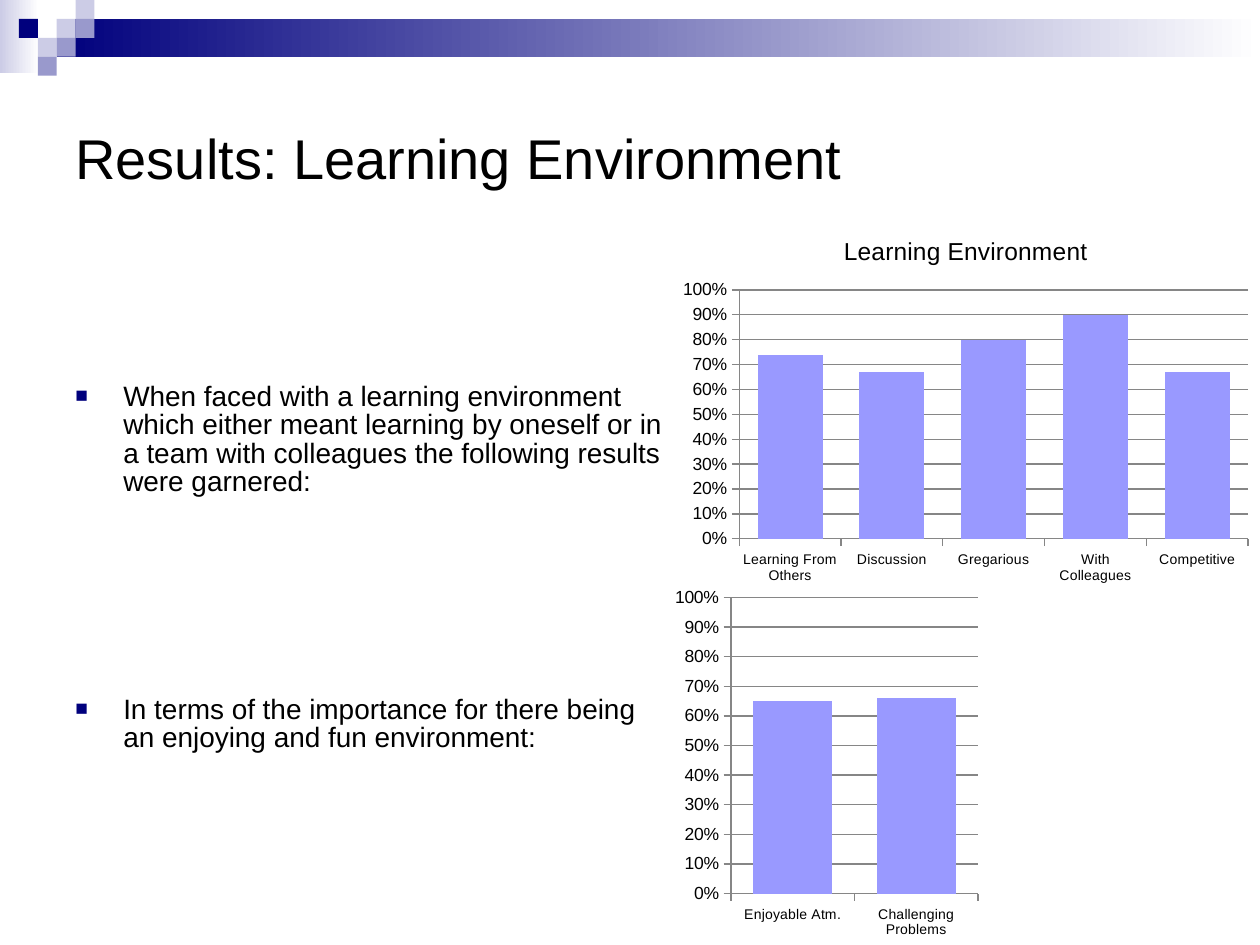
from typing import NamedTuple

from pptx import Presentation
from pptx.chart.data import CategoryChartData
from pptx.dml.color import RGBColor
from pptx.enum.chart import XL_CHART_TYPE, XL_TICK_MARK
from pptx.enum.shapes import MSO_SHAPE
from pptx.enum.text import MSO_ANCHOR
from pptx.oxml import parse_xml
from pptx.oxml.ns import nsdecls, qn
from pptx.util import Inches, Pt

FONT = "Arial"
UNIT = 0.15
HUES = {
    "navy": "00007D",
    "pale": "CCCCE6",
    "mid": "9999CC",
    "bar": "9999FF",
    "grid": "868686",
    "text": "000000",
    "white": "FFFFFF",
}


class Box(NamedTuple):
    x: float
    y: float
    w: float
    h: float


class Band(NamedTuple):
    box: Box
    hue: str


class Tile(NamedTuple):
    col: int
    row: int
    hue: str


class Graph(NamedTuple):
    box: Box
    title: str
    cats: list[str]
    vals: list[float]
    plot: Box


BANDS = [
    Band(Box(0, 0, 0.31, 0.58), "pale"),
    Band(Box(0.45, 0.15, 9.55, 0.3), "navy"),
]
TILES = [
    Tile(3, 1, "pale"),
    Tile(4, 0, "pale"),
    Tile(4, 1, "mid"),
    Tile(2, 2, "pale"),
    Tile(1, 1, "navy"),
    Tile(3, 2, "mid"),
    Tile(2, 3, "mid"),
]
POINTS = [
    "When faced with a learning environment which either meant learning by oneself "
    "or in a team with colleagues the following results were garnered:",
    "In terms of the importance for there being an enjoying and fun environment:",
]
GRAPHS = [
    Graph(
        Box(5.33, 1.72, 4.67, 2.97),
        "Learning Environment",
        ["Learning From Others", "Discussion", "Gregarious", "With Colleagues", "Competitive"],
        [0.74, 0.67, 0.8, 0.9, 0.67],
        Box(0.115, 0.196, 0.865, 0.665),
    ),
    Graph(
        Box(5.31, 4.61, 2.5, 2.89),
        "",
        ["Enjoyable Atm.", "Challenging Problems"],
        [0.65, 0.66],
        Box(0.197, 0.046, 0.784, 0.813),
    ),
]


def rgb(hue: str) -> RGBColor:
    return RGBColor.from_string(HUES[hue])


def place(box: Box) -> list[int]:
    return [Inches(side) for side in box]


def style(font, size: float) -> None:
    font.name = FONT
    font.size = Pt(size)
    font.bold = False
    font.color.rgb = rgb("text")


def add_rect(slide, box: Box):
    rect = slide.shapes.add_shape(MSO_SHAPE.RECTANGLE, *place(box))
    rect.shadow.inherit = False
    rect.line.fill.background()
    return rect


def add_band(slide, band: Band) -> None:
    fill = add_rect(slide, band.box).fill
    fill.gradient()
    fill.gradient_angle = 0
    for stop, hue in zip(fill.gradient_stops, (band.hue, "white")):
        stop.color.rgb = rgb(hue)


def add_tile(slide, tile: Tile) -> None:
    fill = add_rect(slide, Box(tile.col * UNIT, tile.row * UNIT, UNIT, UNIT)).fill
    fill.solid()
    fill.fore_color.rgb = rgb(tile.hue)


def add_title(slide, text: str) -> None:
    frame = slide.shapes.add_textbox(*place(Box(0.5, 0.5, 9, 1.5))).text_frame
    frame.word_wrap = True
    frame.vertical_anchor = MSO_ANCHOR.MIDDLE
    frame.text = text
    style(frame.paragraphs[0].runs[0].font, 32)


def add_bullet(para) -> None:
    props = para._p.get_or_add_pPr()
    props.set("marL", str(Inches(0.38)))
    props.set("indent", str(-Inches(0.38)))
    space = nsdecls("a")
    for xml in (
        f'<a:buClr {space}><a:srgbClr val="{HUES["navy"]}"/></a:buClr>',
        f'<a:buSzPct {space} val="75000"/>',
        f'<a:buFont {space} typeface="{FONT}"/>',
        f'<a:buChar {space} char="■"/>',
    ):
        props.append(parse_xml(xml))


def add_points(slide, points: list[str]) -> None:
    frame = slide.shapes.add_textbox(*place(Box(0.5, 3, 4.89, 3.42))).text_frame
    frame.word_wrap = True
    frame.text = "\n".join(points)
    for rank, para in enumerate(frame.paragraphs):
        para.line_spacing = 0.84
        para.space_before = Pt(114 * rank)
        add_bullet(para)
        style(para.runs[0].font, 16)


def set_plot(chart, plot: Box) -> None:
    area = chart.plots[0]._element.getparent()
    for old in area.findall(qn("c:layout")):
        area.remove(old)
    sides = "".join(f'<c:{name} val="{side}"/>' for name, side in zip("xywh", plot))
    area.insert(0, parse_xml(
        f'<c:layout {nsdecls("c")}><c:manualLayout><c:layoutTarget val="inner"/>'
        f'<c:xMode val="edge"/><c:yMode val="edge"/>{sides}</c:manualLayout></c:layout>'
    ))


def add_graph(slide, graph: Graph) -> None:
    data = CategoryChartData(number_format="0%")
    data.categories = graph.cats
    data.add_series("Series 1", graph.vals)
    kind = XL_CHART_TYPE.COLUMN_CLUSTERED
    chart = slide.shapes.add_chart(kind, *place(graph.box), data).chart
    style(chart.font, 10)
    chart.has_legend = False
    chart.has_title = bool(graph.title)
    if graph.title:
        frame = chart.chart_title.text_frame
        frame.text = graph.title
        style(frame.paragraphs[0].runs[0].font, 14)
        chart.chart_title.include_in_layout = False

    bars = chart.plots[0]
    bars.gap_width = 57
    bars.overlap = -27
    bars.vary_by_categories = False
    fill = bars.series[0].format.fill
    fill.solid()
    fill.fore_color.rgb = rgb("bar")

    scale = chart.value_axis
    scale.minimum_scale = 0
    scale.maximum_scale = 1
    scale.major_unit = 0.1
    scale.has_major_gridlines = True
    scale.tick_labels.number_format = "0%"
    scale.tick_labels.number_format_is_linked = False
    for axis, size in ((scale, 10), (chart.category_axis, 8)):
        axis.major_tick_mark = XL_TICK_MARK.OUTSIDE
        style(axis.tick_labels.font, size)
    for part in (scale, chart.category_axis, scale.major_gridlines):
        part.format.line.color.rgb = rgb("grid")
        part.format.line.width = Pt(0.75)
    set_plot(chart, graph.plot)


def main() -> None:
    deck = Presentation()
    deck.slide_width = Inches(10)
    deck.slide_height = Inches(7.5)
    slide = deck.slides.add_slide(deck.slide_layouts[6])
    for band in BANDS:
        add_band(slide, band)
    for tile in TILES:
        add_tile(slide, tile)
    add_title(slide, "Results: Learning Environment")
    add_points(slide, POINTS)
    for graph in GRAPHS:
        add_graph(slide, graph)
    deck.save("out.pptx")


if __name__ == "__main__":
    main()
